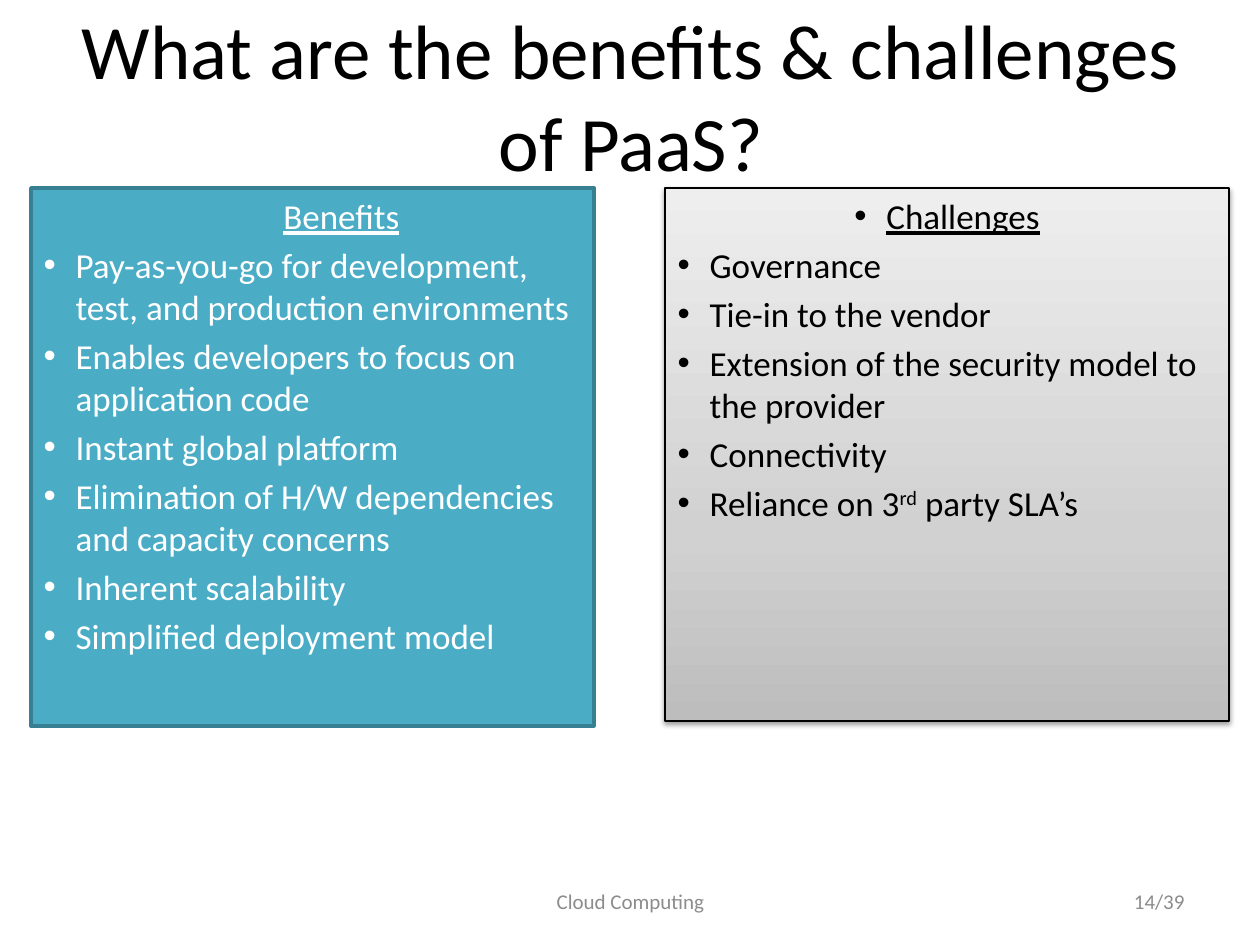
"""Builds a slide comparing the benefits and challenges of PaaS."""
from copy import deepcopy

from pptx import Presentation
from pptx.dml.color import RGBColor
from pptx.enum.text import MSO_ANCHOR, MSO_AUTO_SIZE, PP_ALIGN
from pptx.oxml import parse_xml
from pptx.oxml.ns import nsdecls, qn
from pptx.util import Emu, Pt

LEFT, CENTER, RIGHT = PP_ALIGN.LEFT, PP_ALIGN.CENTER, PP_ALIGN.RIGHT
TOP, MIDDLE = MSO_ANCHOR.TOP, MSO_ANCHOR.MIDDLE
NO_FIT = MSO_AUTO_SIZE.NONE
TWO_CONTENT = 3
SCALE = 914400 / 126

COLORS = {
    "black": "000000", "white": "FFFFFF", "footer": "8C8C8C",
    "teal": "4BACC6", "teal_line": "377F92",
}
GRADIENT = [(0, "BDBDBD"), (0.35, "D1D1D1"), (1, "EEEEEE")]

TITLE = "What are the benefits & challenges of PaaS?"
BENEFITS = [
    "Benefits",
    "Pay-as-you-go for development, test, and production environments",
    "Enables developers to focus on application code",
    "Instant global platform",
    "Elimination of H/W dependencies and capacity concerns",
    "Inherent scalability",
    "Simplified deployment model",
]
CHALLENGES = [
    "Challenges",
    "Governance",
    "Tie-in to the vendor",
    "Extension of the security model to the provider",
    "Connectivity",
    ("Reliance on 3", "rd", " party SLA’s"),
]
FOOTERS = [
    ("14/39", (903, 876, 294, 50), RIGHT),
    ("Cloud Computing", (431, 876, 399, 50), CENTER),
]


def px(value):
    return Emu(round(value * SCALE))


def rgb(name):
    return RGBColor.from_string(COLORS[name])


def place(shape, box, anchor):
    for name, value in zip(("left", "top", "width", "height"), box):
        setattr(shape, name, px(value))
    frame = shape.text_frame
    for name, value in {"word_wrap": True, "auto_size": NO_FIT,
                        "vertical_anchor": anchor}.items():
        setattr(frame, name, value)
    return frame


def add_run(paragraph, text, size, color, underline=False):
    run = paragraph.add_run()
    run.text = text
    for name, value in {"name": "Calibri", "size": Pt(size),
                        "underline": underline}.items():
        setattr(run.font, name, value)
    run.font.color.rgb = rgb(color)
    return run


def add_line(shape, box, text, size, color, align):
    paragraph = place(shape, box, MIDDLE).paragraphs[0]
    paragraph.alignment = align
    add_run(paragraph, text, size, color)


def set_indent(paragraph, margin, indent):
    properties = paragraph._p.get_or_add_pPr()
    properties.set("marL", str(px(margin)))
    properties.set("indent", str(px(indent)))
    return properties


def fill_list(shape, box, items, color):
    frame = place(shape, box, TOP)
    for index, item in enumerate(items):
        heading = index == 0
        paragraph = frame.paragraphs[0] if heading else frame.add_paragraph()
        paragraph.alignment = CENTER if heading else LEFT
        paragraph.space_before = Pt(0 if heading else 4)
        set_indent(paragraph, 32, -32)
        parts = (item,) if isinstance(item, str) else item
        for position, part in enumerate(parts):
            run = add_run(paragraph, part, 20, color, heading)
            if position == 1:
                run.font._element.set("baseline", "30000")
    return frame


def set_line(shape, color, width):
    shape.line.color.rgb = rgb(color)
    shape.line.width = Pt(width)


def set_gradient(shape):
    shape.fill.gradient()
    stop_list = shape._element.spPr.find(".//" + qn("a:gsLst"))
    stop_list.append(deepcopy(stop_list[0]))
    for stop, (position, color) in zip(shape.fill.gradient_stops, GRADIENT):
        stop.position = position
        stop.color.rgb = RGBColor.from_string(color)
    shape.fill.gradient_angle = 90


def add_shadow(shape):
    shape._element.spPr.append(parse_xml(
        f'<a:effectLst {nsdecls("a")}><a:outerShdw blurRad="40000" dist="20000" '
        'dir="5400000" rotWithShape="0"><a:srgbClr val="000000">'
        '<a:alpha val="38000"/></a:srgbClr></a:outerShdw></a:effectLst>'))


def main():
    presentation = Presentation()
    presentation.slide_width, presentation.slide_height = px(1260), px(945)
    slide = presentation.slides.add_slide(presentation.slide_layouts[TWO_CONTENT])
    title, benefits, challenges = slide.placeholders
    add_line(title, (64, 16, 1134, 158), TITLE, 44, "black", CENTER)

    frame = fill_list(benefits, (31, 188, 563, 538), BENEFITS, "white")
    heading = frame.paragraphs[0]
    heading.level = 1
    set_indent(heading, 97, -39).append(parse_xml(f'<a:buNone {nsdecls("a")}/>'))
    benefits.fill.solid()
    benefits.fill.fore_color.rgb = rgb("teal")
    set_line(benefits, "teal_line", 2)

    fill_list(challenges, (665, 188, 564, 533), CHALLENGES, "black")
    set_gradient(challenges)
    set_line(challenges, "black", 0.75)
    add_shadow(challenges)

    for text, box, align in FOOTERS:
        footer = slide.shapes.add_textbox(0, 0, 0, 0)
        add_line(footer, box, text, 12, "footer", align)
    presentation.save("out.pptx")


if __name__ == "__main__":
    main()
